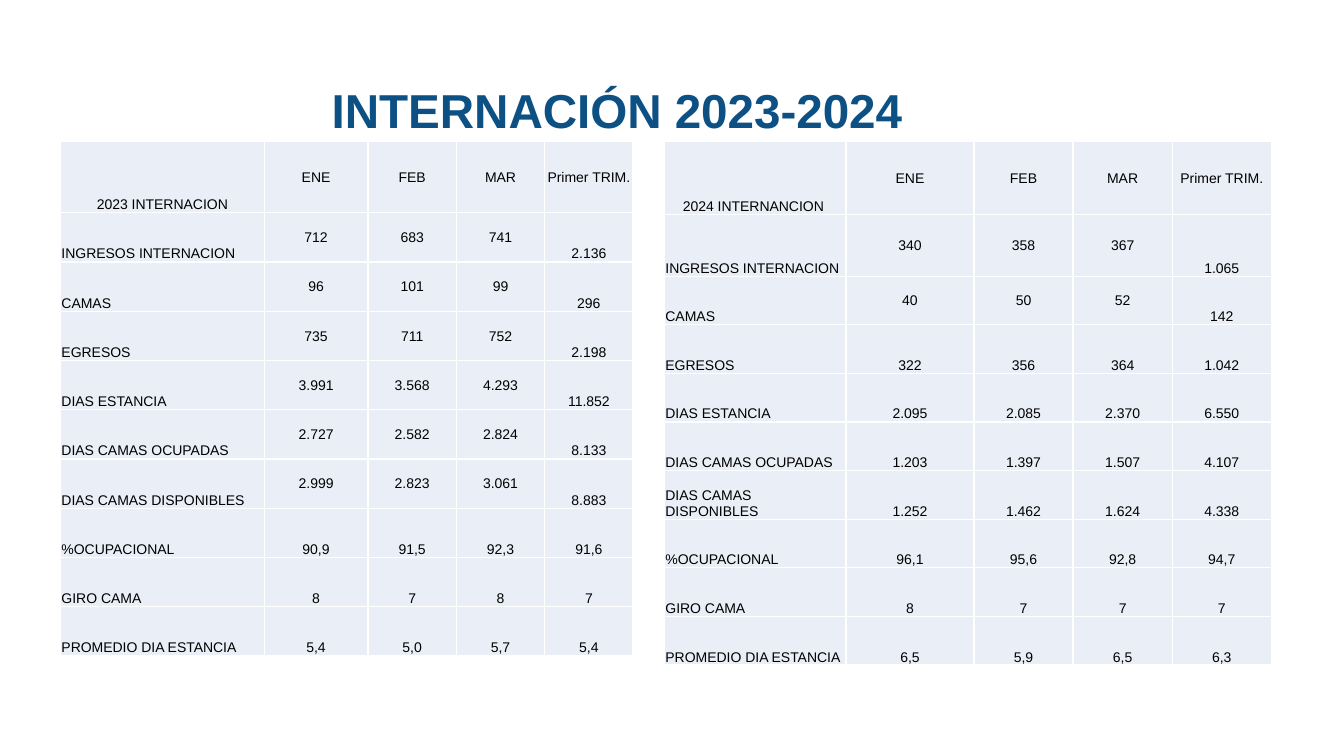
import dataclasses
import lxml.etree
import pptx
import pptx.dml.color
import pptx.enum.text
import pptx.oxml.ns
import pptx.util

Inches = pptx.util.Inches
Pt = pptx.util.Pt
ALIGN = pptx.enum.text.PP_ALIGN
ANCHOR = pptx.enum.text.MSO_ANCHOR


@dataclasses.dataclass(frozen=True)
class Theme:
    font: str = "Arial"
    title: str = "0D5084"
    ink: str = "000000"
    fill: str = "EAEFF7"
    rule: str = "FFFFFF"
    big: int = 34
    small: int = 10


MONTHS = ["ENE", "FEB", "MAR", "Primer TRIM."]
LABELS = [
    "INGRESOS INTERNACION", "CAMAS", "EGRESOS", "DIAS ESTANCIA",
    "DIAS CAMAS OCUPADAS", "DIAS CAMAS DISPONIBLES", "%OCUPACIONAL",
    "GIRO CAMA", "PROMEDIO DIA ESTANCIA",
]
DATA_2023 = [
    ["712", "683", "741", "2.136"],
    ["96", "101", "99", "296"],
    ["735", "711", "752", "2.198"],
    ["3.991", "3.568", "4.293", "11.852"],
    ["2.727", "2.582", "2.824", "8.133"],
    ["2.999", "2.823", "3.061", "8.883"],
    ["90,9", "91,5", "92,3", "91,6"],
    ["8", "7", "8", "7"],
    ["5,4", "5,0", "5,7", "5,4"],
]
DATA_2024 = [
    ["340", "358", "367", "1.065"],
    ["40", "50", "52", "142"],
    ["322", "356", "364", "1.042"],
    ["2.095", "2.085", "2.370", "6.550"],
    ["1.203", "1.397", "1.507", "4.107"],
    ["1.252", "1.462", "1.624", "4.338"],
    ["96,1", "95,6", "92,8", "94,7"],
    ["8", "7", "7", "7"],
    ["6,5", "5,9", "6,5", "6,3"],
]


def share(total, first, count):
    """Return the given first sizes, then equal parts of what is left."""
    left = count - len(first)
    return first + [(total - sum(first)) / left] * left


class Page:
    """Draws titles and tables on one slide in one theme."""

    def __init__(self, slide, theme):
        self.slide = slide
        self.theme = theme

    def text(self, para, words, size, color, bold=False):
        """Add one styled run to a paragraph."""
        run = para.add_run()
        run.text = words
        run.font.name = self.theme.font
        run.font.size = Pt(size)
        run.font.bold = bold
        run.font.color.rgb = pptx.dml.color.RGBColor.from_string(color)

    def title(self, words, box):
        """Add the centred slide title."""
        frame = self.slide.shapes.add_textbox(*map(Inches, box)).text_frame
        frame.word_wrap = True
        frame.vertical_anchor = ANCHOR.MIDDLE
        para = frame.paragraphs[0]
        para.alignment = ALIGN.CENTER
        para.line_spacing = 0.9
        self.text(para, words, self.theme.big, self.theme.title, True)

    def border(self, cell):
        """Draw a thin rule on all four sides of a cell."""
        qn = pptx.oxml.ns.qn
        props = cell._tc.get_or_add_tcPr()
        for side in "LRTB":
            line = lxml.etree.SubElement(props, qn(f"a:ln{side}"), w=str(Pt(1)))
            solid = lxml.etree.SubElement(line, qn("a:solidFill"))
            lxml.etree.SubElement(solid, qn("a:srgbClr"), val=self.theme.rule)

    def cell(self, cell, words, align, anchor):
        """Style and fill one table cell."""
        self.border(cell)
        cell.fill.solid()
        cell.fill.fore_color.rgb = pptx.dml.color.RGBColor.from_string(self.theme.fill)
        cell.margin_left = cell.margin_right = cell.margin_top = Inches(0.01)
        cell.margin_bottom = 0
        cell.vertical_anchor = anchor
        para = cell.text_frame.paragraphs[0]
        para.alignment = align
        self.text(para, words, self.theme.small, self.theme.ink)

    def table(self, head, data, box, wide, tall, mid):
        """Add a year table whose first mid data rows have centred months."""
        rows = [[head] + MONTHS]
        rows += [[label] + vals for label, vals in zip(LABELS, data)]
        count, width = len(rows), len(rows[0])
        grid = self.slide.shapes.add_table(count, width, *map(Inches, box)).table
        grid.first_row = grid.horz_banding = False
        for col, size in zip(grid.columns, share(box[2], wide, width)):
            col.width = Inches(size)
        for row, size in zip(grid.rows, share(box[3], tall, count)):
            row.height = Inches(size)
        for r, row in enumerate(rows):
            for c, words in enumerate(row):
                align = ALIGN.LEFT if r and not c else ALIGN.CENTER
                inner = c > 0 and (r == 0 or (r <= mid and c < width - 1))
                anchor = ANCHOR.MIDDLE if inner else ANCHOR.BOTTOM
                self.cell(grid.cell(r, c), words, align, anchor)


def main():
    """Build and save the slide."""
    deck = pptx.Presentation()
    deck.slide_width, deck.slide_height = Inches(13.33), Inches(7.5)
    page = Page(deck.slides.add_slide(deck.slide_layouts[6]), Theme())
    page.title("INTERNACIÓN 2023-2024", (0.58, 0.4, 11.08, 1.45))
    page.table("2023 INTERNACION", DATA_2023, (0.6, 1.4, 5.68, 5.11),
               [2.02, 1.03], [0.71], 6)
    page.table("2024 INTERNANCION ", DATA_2024, (6.59, 1.4, 6.02, 5.2),
               [1.8, 1.27], [0.73, 0.61], 2)
    deck.save("out.pptx")


if __name__ == "__main__":
    main()
